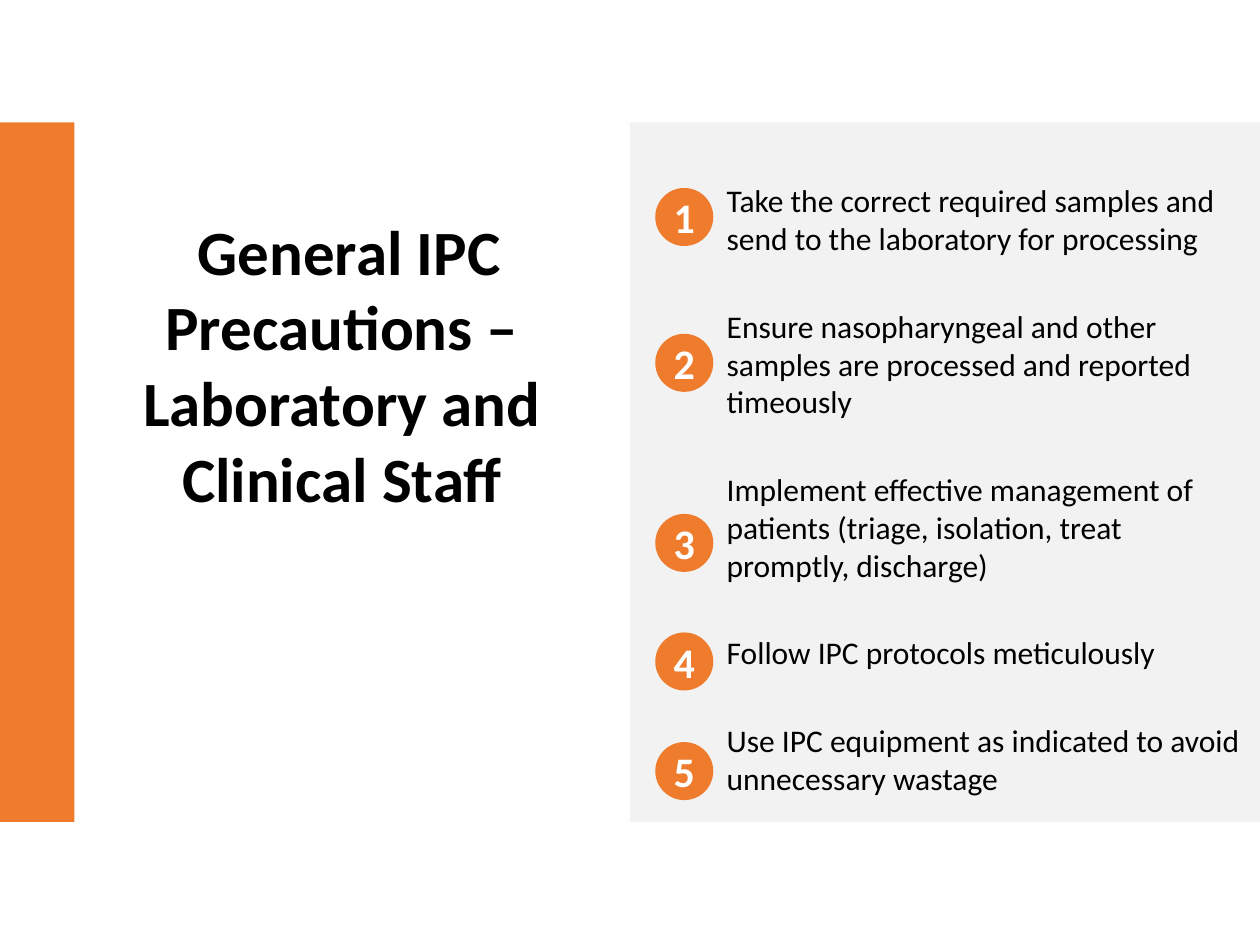
from lxml.etree import SubElement
from pptx import Presentation
from pptx.dml.color import RGBColor
from pptx.enum.shapes import MSO_SHAPE
from pptx.enum.text import MSO_ANCHOR, PP_ALIGN
from pptx.oxml.ns import qn
from pptx.util import Cm, Pt

ORANGE, GREY, BLACK, WHITE = "EF7B2D", "808080", "000000", "FFFFFF"

TITLE = " General IPC Precautions – Laboratory and Clinical Staff"
# Each precaution with the top of its number badge in cm
PRECAUTIONS = [
    ("Take the correct required samples and send to the laboratory "
     "for processing", 3.79),
    ("Ensure nasopharyngeal and other samples are processed and reported "
     "timeously", 6.73),
    ("Implement effective management of patients (triage, isolation, treat "
     "promptly, discharge)", 10.36),
    ("Follow IPC protocols meticulously", 12.75),
    ("Use IPC equipment as indicated to avoid unnecessary wastage", 14.96),
]


def color(hex_string):
    return RGBColor.from_string(hex_string)


def apply_format(target, values):
    for name, value in values.items():
        setattr(target, name, value)


class SlideBuilder:
    """Holds the text style and the slide being built."""

    font_name = "Calibri"

    def __init__(self, slide):
        self.slide = slide

    def block(self, preset, left, top, width, height, fill, opacity=None):
        shape = self.slide.shapes.add_shape(
            preset, Cm(left), Cm(top), Cm(width), Cm(height))
        shape.shadow.inherit = False
        shape.line.fill.background()
        shape.fill.solid()
        shape.fill.fore_color.rgb = color(fill)
        if opacity is not None:
            fill_color = shape._element.spPr.find(qn("a:solidFill"))[0]
            SubElement(fill_color, qn("a:alpha"), val=str(opacity * 1000))
        return shape

    def fill_text(self, shape, lines, font, frame=None, paragraph_format=None,
                  gap=0):
        text_frame = shape.text_frame
        apply_format(text_frame, {"word_wrap": True, **(frame or {})})
        for index, line in enumerate(lines):
            paragraph = (text_frame.add_paragraph() if index
                         else text_frame.paragraphs[0])
            apply_format(paragraph, paragraph_format or {})
            if index:
                paragraph.space_before = Pt(gap)
            run = paragraph.add_run()
            run.text = line
            values = {"name": self.font_name, **font}
            run.font.color.rgb = color(values.pop("color"))
            apply_format(run.font, values)

    def text(self, left, top, width, height, lines, font, **options):
        box = self.slide.shapes.add_textbox(
            Cm(left), Cm(top), Cm(width), Cm(height))
        self.fill_text(box, lines, font, **options)

    def badge(self, number, left, top, size=1.17):
        circle = self.block(MSO_SHAPE.OVAL, left, top, size, size, ORANGE)
        margins = ("margin_left", "margin_right", "margin_top", "margin_bottom")
        self.fill_text(circle, [str(number)],
                       {"size": Pt(24), "bold": True, "color": WHITE},
                       frame={"vertical_anchor": MSO_ANCHOR.MIDDLE,
                              **dict.fromkeys(margins, 0)},
                       paragraph_format={"alignment": PP_ALIGN.CENTER})


def main():
    presentation = Presentation()
    presentation.slide_width, presentation.slide_height = Cm(25.4), Cm(19.05)
    slide = presentation.slides.add_slide(presentation.slide_layouts[6])
    builder = SlideBuilder(slide)

    # Title, raised by a deep bottom margin
    builder.text(1.88, 3.84, 10.03, 11.35, [TITLE],
                 {"size": Pt(36), "bold": True, "color": BLACK},
                 frame={"vertical_anchor": MSO_ANCHOR.MIDDLE,
                        "margin_bottom": Cm(4.5)},
                 paragraph_format={"alignment": PP_ALIGN.CENTER})

    # Side bar and list panel
    builder.block(MSO_SHAPE.RECTANGLE, 0, 2.47, 1.5, 14.1, ORANGE)
    builder.block(MSO_SHAPE.RECTANGLE, 12.7, 2.47, 12.7, 14.1, GREY, opacity=10)

    # Precautions
    builder.text(14.4, 3.53, 11, 13.59, [line for line, _ in PRECAUTIONS],
                 {"size": Pt(18), "color": BLACK}, gap=28.5)

    # Number badges
    for number, (_, top) in enumerate(PRECAUTIONS, start=1):
        builder.badge(number, 13.21, top)

    presentation.save("out.pptx")


if __name__ == "__main__":
    main()
